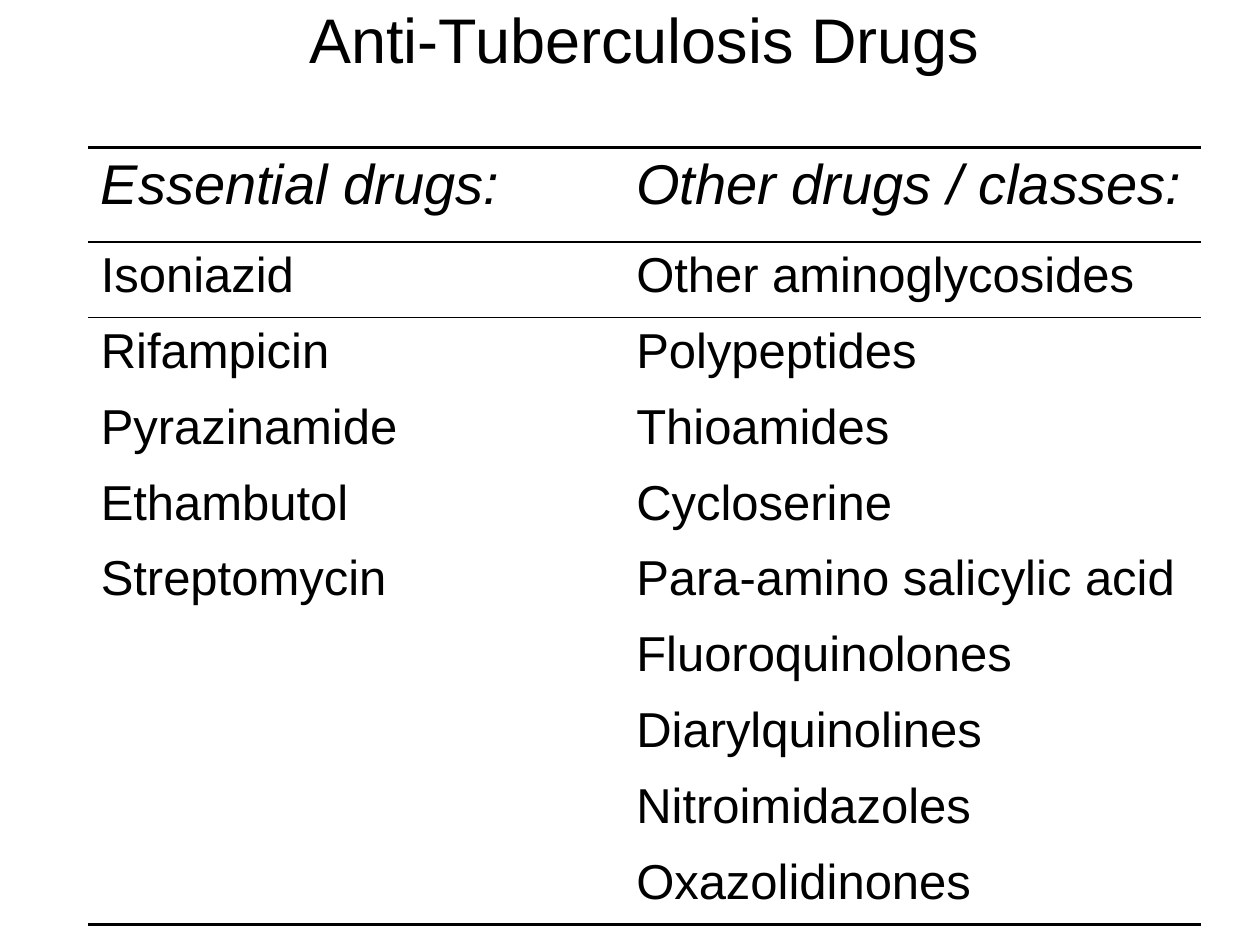
import pptx
import pptx.dml.color
import pptx.enum.text
import pptx.oxml.ns
import pptx.util
from lxml import etree

Inches = pptx.util.Inches
BLACK = "000000"
THICK, THIN = 2.25, 1
NO_GRID_STYLE = "{2D5ABB26-0587-4C30-8999-92F81FD0307C}"
TITLE = "Anti-Tuberculosis Drugs"
HEADINGS = ("Essential drugs:", "Other drugs / classes:")
ESSENTIAL_DRUGS = ["Isoniazid", "Rifampicin", "Pyrazinamide", "Ethambutol", "Streptomycin"]
OTHER_DRUGS = [
    "Other aminoglycosides", "Polypeptides", "Thioamides", "Cycloserine",
    "Para-amino salicylic acid", "Fluoroquinolones", "Diarylquinolines",
    "Nitroimidazoles", "Oxazolidinones",
]


def color(hex_value):
    """Turn a hex string into a colour."""
    return pptx.dml.color.RGBColor.from_string(hex_value)


def add_element(parent, tag, **attributes):
    """Append a DrawingML element to its parent."""
    return etree.SubElement(parent, pptx.oxml.ns.qn(tag), **attributes)


def write_text(cell, text, size=28, italic=False, align=pptx.enum.text.PP_ALIGN.LEFT):
    """Write one formatted paragraph into a cell."""
    paragraph = cell.text_frame.paragraphs[0]
    paragraph.alignment = align
    paragraph.space_before = pptx.util.Pt(0)
    spacing = paragraph._p.pPr.find(pptx.oxml.ns.qn("a:spcBef"))
    spacing.remove(spacing[0])
    add_element(spacing, "a:spcPct", val="20000")
    run = paragraph.add_run()
    run.text = text
    run.font.name = "Arial"
    run.font.size = pptx.util.Pt(size)
    run.font.italic = italic
    run.font.color.rgb = color(BLACK)


def rule_cell(cell, top=None, bottom=None):
    """Draw a cell's horizontal rules and clear its fill."""
    properties = cell._tc.get_or_add_tcPr()
    for tag, width in (("a:lnT", top), ("a:lnB", bottom)):
        if width:
            line = add_element(properties, tag, w=str(pptx.util.Pt(width)))
            fill = add_element(line, "a:solidFill")
            add_element(fill, "a:srgbClr", val=BLACK)
    cell.fill.background()


def add_drug_table(slide, left, top, width, height):
    """Place the titled two-column drug table in the given box."""
    row_count = len(OTHER_DRUGS) + 2
    frame = slide.shapes.add_table(row_count, 2, left, top, width, height)
    table = frame.table
    table.first_row = table.horz_banding = False
    table._tbl.tblPr.find(pptx.oxml.ns.qn("a:tableStyleId")).text = NO_GRID_STYLE

    table.columns[0].width = Inches(4.25)
    table.columns[1].width = width - Inches(4.25)
    title_height, heading_height = Inches(1.17), Inches(0.75)
    drug_height = (height - title_height - heading_height) // len(OTHER_DRUGS)
    heights = [title_height, heading_height] + [drug_height] * len(OTHER_DRUGS)
    for row, row_height in zip(table.rows, heights):
        row.height = row_height

    rules = {0: (None, THICK), 1: (THICK, THIN), 2: (THIN, None), row_count - 1: (None, THICK)}
    for index, row in enumerate(table.rows):
        for cell in row.cells:
            rule_cell(cell, *rules.get(index, (None, None)))

    table.cell(0, 0).merge(table.cell(0, 1))
    write_text(table.cell(0, 0), TITLE, size=36, align=pptx.enum.text.PP_ALIGN.CENTER)
    for column, drugs in enumerate((ESSENTIAL_DRUGS, OTHER_DRUGS)):
        write_text(table.cell(1, column), HEADINGS[column], size=32, italic=True)
        for row_index, drug in enumerate(drugs, start=2):
            write_text(table.cell(row_index, column), drug)


def main():
    """Build and save the slide."""
    presentation = pptx.Presentation()
    presentation.slide_width, presentation.slide_height = Inches(10), Inches(7.5)
    slide = presentation.slides.add_slide(presentation.slide_layouts[6])
    add_drug_table(slide, Inches(0.7), Inches(0), Inches(8.83), Inches(7.34))
    presentation.save("out.pptx")


if __name__ == "__main__":
    main()
